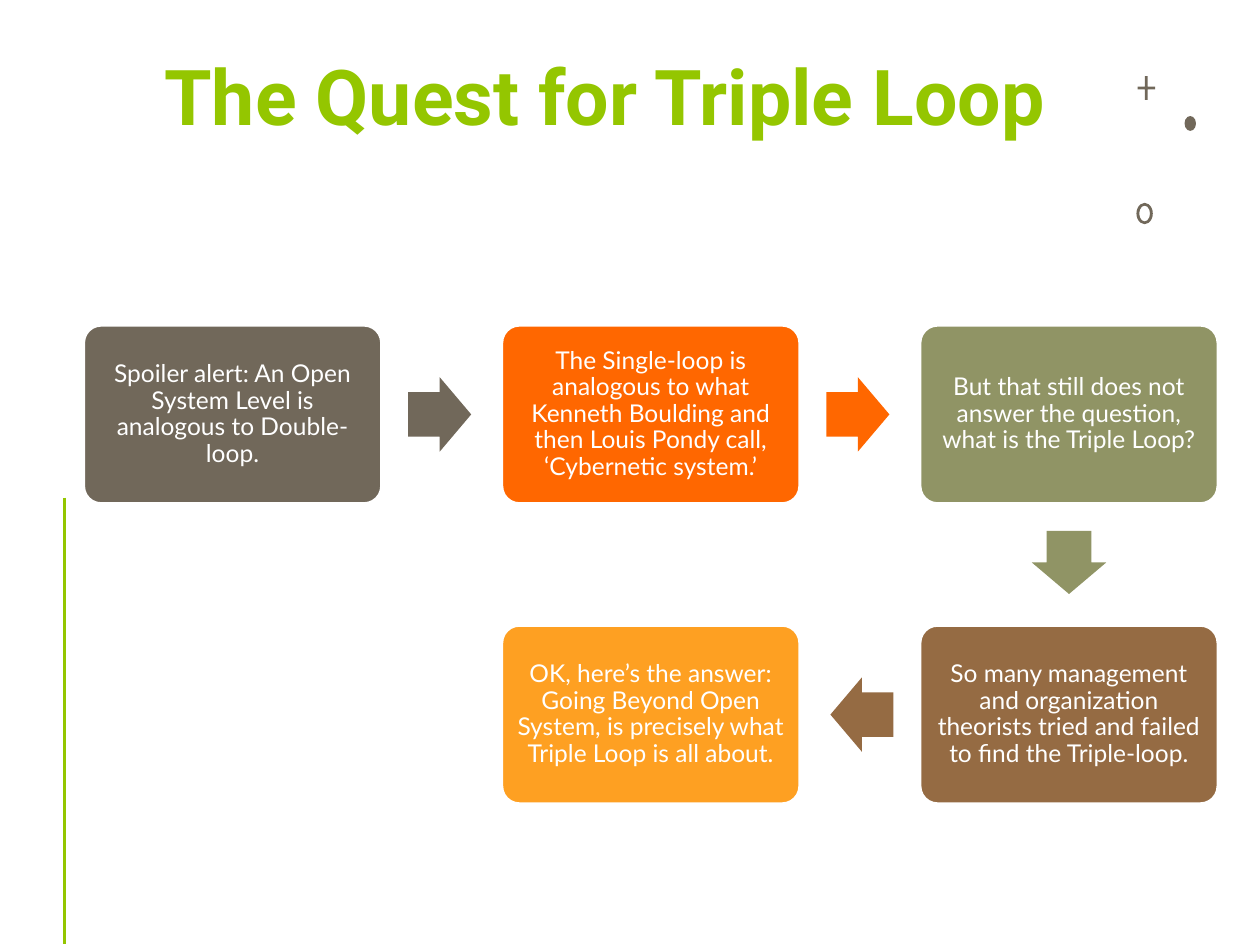
from dataclasses import dataclass

from pptx import Presentation
from pptx.dml.color import RGBColor
from pptx.enum.shapes import MSO_CONNECTOR, MSO_SHAPE
from pptx.enum.text import MSO_ANCHOR, PP_ALIGN
from pptx.oxml.ns import qn
from pptx.util import Cm, Pt

CENTER = PP_ALIGN.CENTER
MIDDLE = MSO_ANCHOR.MIDDLE
ROUNDED = MSO_SHAPE.ROUNDED_RECTANGLE
ARROW = MSO_SHAPE.RIGHT_ARROW


@dataclass(frozen=True)
class Theme:
    green: RGBColor = RGBColor.from_string("94C600")
    white: RGBColor = RGBColor.from_string("FFFFFF")
    taupe: RGBColor = RGBColor.from_string("71685A")
    orange: RGBColor = RGBColor.from_string("FF6700")
    olive: RGBColor = RGBColor.from_string("909465")
    brown: RGBColor = RGBColor.from_string("956B43")
    amber: RGBColor = RGBColor.from_string("FEA022")
    title_font: str = "Roboto"
    body_font: str = "Lato"
    title_size: Pt = Pt(44)
    body_size: Pt = Pt(14)
    line_width: Pt = Pt(2)


theme = Theme()
presentation = Presentation()
presentation.slide_width = Cm(25.4)
presentation.slide_height = Cm(19.05)
slide = presentation.slides.add_slide(presentation.slide_layouts[6])


def add_filled_shape(kind, left, top, width, height, color, adjustments=()):
    """Add a borderless shape without shadow; lengths are in centimetres."""
    shape = slide.shapes.add_shape(kind, Cm(left), Cm(top), Cm(width), Cm(height))
    shape.shadow.inherit = False
    shape.fill.solid()
    shape.fill.fore_color.rgb = color
    shape.line.fill.background()
    for index, value in enumerate(adjustments):
        shape.adjustments[index] = value
    return shape


def write_centered(text_frame, text, font_name, size, color, bold=False):
    text_frame.word_wrap = True
    paragraph = text_frame.paragraphs[0]
    paragraph.text = text
    paragraph.alignment = CENTER
    paragraph.line_spacing = 0.9
    paragraph.font.name = font_name
    paragraph.font.size = size
    paragraph.font.color.rgb = color
    paragraph.font.bold = bold


# Title
title = slide.shapes.add_textbox(Cm(2.46), Cm(1.07), Cm(19.48), Cm(3.33))
write_centered(title.text_frame, "The Quest for Triple Loop",
               theme.title_font, theme.title_size, theme.green, bold=True)

# Corner ornaments: plus, dot, ring
add_filled_shape(MSO_SHAPE.MATH_PLUS, 22.87, 1.45, 0.48, 0.65, theme.taupe, [0.12])
add_filled_shape(MSO_SHAPE.OVAL, 23.88, 2.34, 0.23, 0.3, theme.taupe)
add_filled_shape(MSO_SHAPE.DONUT, 22.91, 4.09, 0.33, 0.43, theme.taupe, [0.17])

# Vertical rule at the left
rule = slide.shapes.add_connector(
    MSO_CONNECTOR.STRAIGHT, Cm(1.3), Cm(10.03), Cm(1.3), Cm(19.02))
rule.line.color.rgb = theme.green
rule.line.width = theme.line_width
rule._element.spPr.append(rule._element.spPr.makeelement(qn("a:effectLst"), {}))

# Process steps: column, row, colour, text
steps = [
    (0, 0, theme.taupe,
     "Spoiler alert: An Open System Level is analogous to Double-loop."),
    (1, 0, theme.orange,
     "The Single-loop is analogous to what Kenneth Boulding and then "
     "Louis Pondy call, ‘Cybernetic system.’"),
    (2, 0, theme.olive,
     "But that still does not answer the question, what is the Triple Loop?"),
    (2, 1, theme.brown,
     "So many management and organization theorists tried and failed "
     "to find the Triple-loop."),
    (1, 1, theme.amber,
     "OK, here’s the answer: Going Beyond Open System, is precisely what "
     "Triple Loop is all about."),
]
GRID_LEFT, GRID_TOP = 1.68, 6.55
COLUMN_PITCH, ROW_PITCH = 8.43, 6.05
BOX_WIDTH, BOX_HEIGHT = 6.02, 3.61
ARROW_LENGTH, ARROW_BREADTH = 1.27, 1.5
ARROW_SHIFT = 0.04  # arrows sit slightly nearer to the box they leave
ROTATIONS = {(1, 0): 0, (0, 1): 90, (-1, 0): 180}

for index, (column, row, color, text) in enumerate(steps):
    left = GRID_LEFT + column * COLUMN_PITCH
    top = GRID_TOP + row * ROW_PITCH
    box = add_filled_shape(ROUNDED, left, top, BOX_WIDTH, BOX_HEIGHT, color, [0.1])
    box.line.color.rgb = theme.white
    box.line.width = theme.line_width
    frame = box.text_frame
    frame.vertical_anchor = MIDDLE
    frame.margin_left = frame.margin_right = Cm(0.15)
    frame.margin_top = frame.margin_bottom = Cm(0.15)
    write_centered(frame, text, theme.body_font, theme.body_size, theme.white)

    if index + 1 < len(steps):
        next_column, next_row = steps[index + 1][:2]
        across, down = next_column - column, next_row - row
        center_x = left + BOX_WIDTH / 2 + across * (COLUMN_PITCH / 2 - ARROW_SHIFT)
        center_y = top + BOX_HEIGHT / 2 + down * (ROW_PITCH / 2 - ARROW_SHIFT)
        arrow = add_filled_shape(
            ARROW, center_x - ARROW_LENGTH / 2, center_y - ARROW_BREADTH / 2,
            ARROW_LENGTH, ARROW_BREADTH, color, [0.6, 0.5])
        arrow.rotation = ROTATIONS[across, down]

presentation.save("out.pptx")
